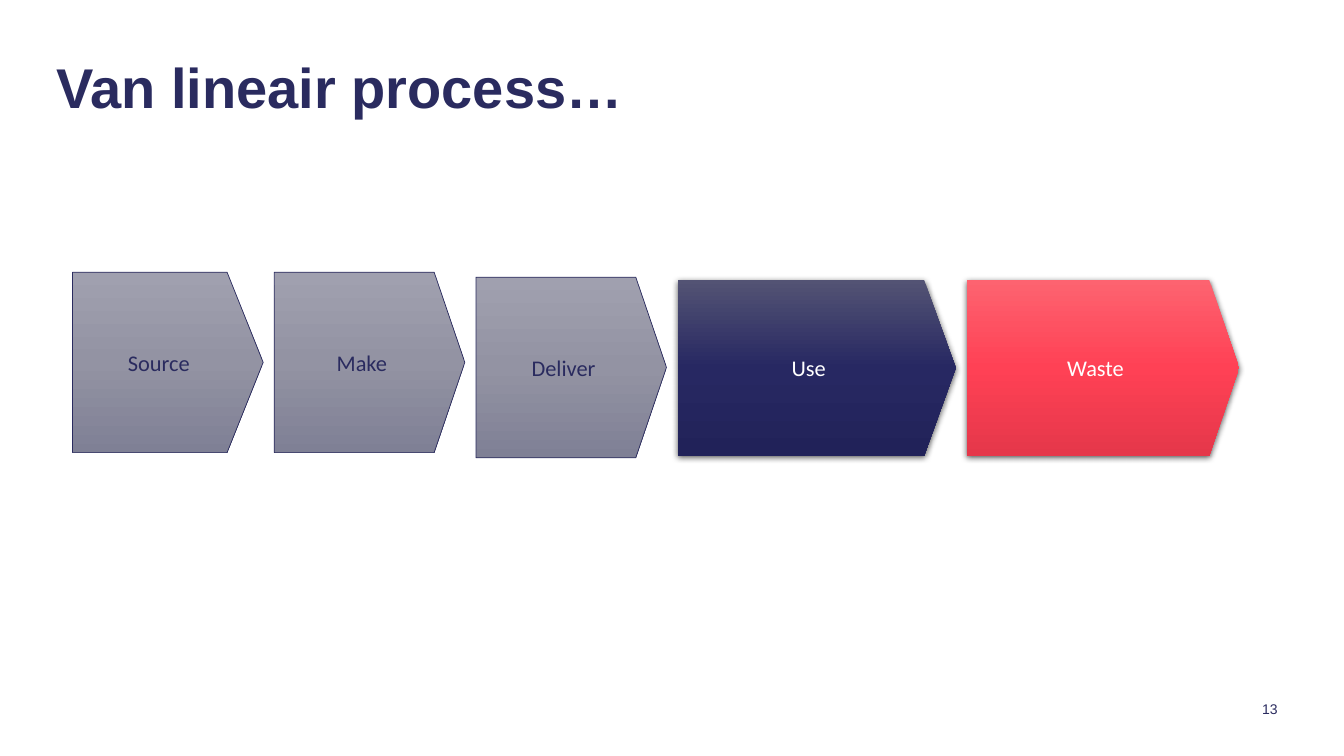
from copy import deepcopy
from dataclasses import dataclass

from lxml import etree
from pptx import Presentation
from pptx.dml.color import RGBColor
from pptx.enum.shapes import MSO_SHAPE
from pptx.enum.text import MSO_ANCHOR, PP_ALIGN
from pptx.oxml import parse_xml
from pptx.oxml.ns import nsdecls, qn
from pptx.util import Inches, Pt

PENTAGON = MSO_SHAPE.PENTAGON
TOP, MIDDLE = MSO_ANCHOR.TOP, MSO_ANCHOR.MIDDLE
LEFT, CENTER, RIGHT = PP_ALIGN.LEFT, PP_ALIGN.CENTER, PP_ALIGN.RIGHT

# Content: label, style, width, top, height, point depth
TITLE = "Van lineair process…"
PAGE_NUMBER = "13"
STEPS = [
    ("Source", "muted", 1.89, 2.70, 1.79, 0.20),
    ("Make", "muted", 1.89, 2.70, 1.79, 0.17),
    ("Deliver", "muted", 1.89, 2.75, 1.79, 0.17),
    ("Use", "navy", 2.76, 2.78, 1.74, 0.18),
    ("Waste", "red", 2.70, 2.78, 1.74, 0.17),
]
CHAIN_LEFT, STEP_GAP = 0.72, 0.11


@dataclass(frozen=True)
class Theme:
    ink: str = "2A2B5F"
    white: str = "FFFFFF"
    heading_font: str = "Arial"
    step_font: str = "Calibri"
    title_size: int = 40
    step_size: int = 16
    number_size: int = 10
    outline: float = 0.5


THEME = Theme()
# Style: gradient from top to bottom, text colour, raised with a shadow
STYLES = {
    "muted": (("A0A0AF", "9393A3", "7F8095"), THEME.ink, False),
    "navy": (("535374", "272862", "212259"), THEME.white, True),
    "red": (("FD6370", "FF4155", "E5374A"), THEME.white, True),
}


def write(shape, text, font, size, color, align, anchor, bold=False):
    frame = shape.text_frame
    frame.word_wrap = True
    frame.vertical_anchor = anchor
    frame.text = text
    para = frame.paragraphs[0]
    para.alignment = align
    span = para.runs[0].font
    span.name, span.size, span.bold = font, Pt(size), bold
    span.color.rgb = RGBColor.from_string(color)
    return frame


def fill_gradient(shape, colors):
    shape.fill.gradient()
    shape.fill.gradient_angle = 270
    stop_list = shape._element.spPr.find(qn("a:gradFill")).find(qn("a:gsLst"))
    while len(stop_list) < len(colors):
        stop_list.append(deepcopy(stop_list[-1]))
    for index, (stop, color) in enumerate(zip(shape.fill.gradient_stops, colors)):
        stop.position = index / (len(colors) - 1)
        stop.color.rgb = RGBColor.from_string(color)


def add_shadow(shape):
    effects = shape._element.spPr.find(qn("a:effectLst"))
    shadow = parse_xml(
        f'<a:outerShdw {nsdecls("a")} blurRad="{Pt(4.5)}" dist="{Pt(1.5)}" '
        'dir="5400000" rotWithShape="0"/>'
    )
    black = etree.SubElement(shadow, qn("a:srgbClr"), val="000000")
    etree.SubElement(black, qn("a:alpha"), val="63000")
    effects.append(shadow)


def add_step(page, left, label, style, width, top, height, depth):
    colors, text_color, raised = STYLES[style]
    step = page.shapes.add_shape(
        PENTAGON, Inches(left), Inches(top), Inches(width), Inches(height))
    step.adjustments[0] = depth
    step.shadow.inherit = False
    fill_gradient(step, colors)
    if raised:
        step.line.fill.background()
        add_shadow(step)
    else:
        step.line.color.rgb = RGBColor.from_string(THEME.ink)
        step.line.width = Pt(THEME.outline)
    write(step, label, THEME.step_font, THEME.step_size, text_color, CENTER, MIDDLE)


def main():
    deck = Presentation()
    deck.slide_width, deck.slide_height = Inches(13.33), Inches(7.5)
    page = deck.slides.add_slide(deck.slide_layouts[6])

    # Title
    box = page.shapes.add_textbox(Inches(0.56), Inches(0.6), Inches(8.46), Inches(0.79))
    frame = write(box, TITLE, THEME.heading_font, THEME.title_size, THEME.ink,
                  LEFT, TOP, bold=True)
    frame.margin_left = frame.margin_right = frame.margin_top = frame.margin_bottom = 0
    frame.paragraphs[0].line_spacing = 0.9

    # Process chain
    left = CHAIN_LEFT
    for label, style, width, top, height, depth in STEPS:
        add_step(page, left, label, style, width, top, height, depth)
        left += width + STEP_GAP

    # Page number
    box = page.shapes.add_textbox(Inches(11.55), Inches(6.9), Inches(1.22), Inches(0.4))
    write(box, PAGE_NUMBER, THEME.heading_font, THEME.number_size, THEME.ink, RIGHT, TOP)

    deck.save("out.pptx")


if __name__ == "__main__":
    main()
